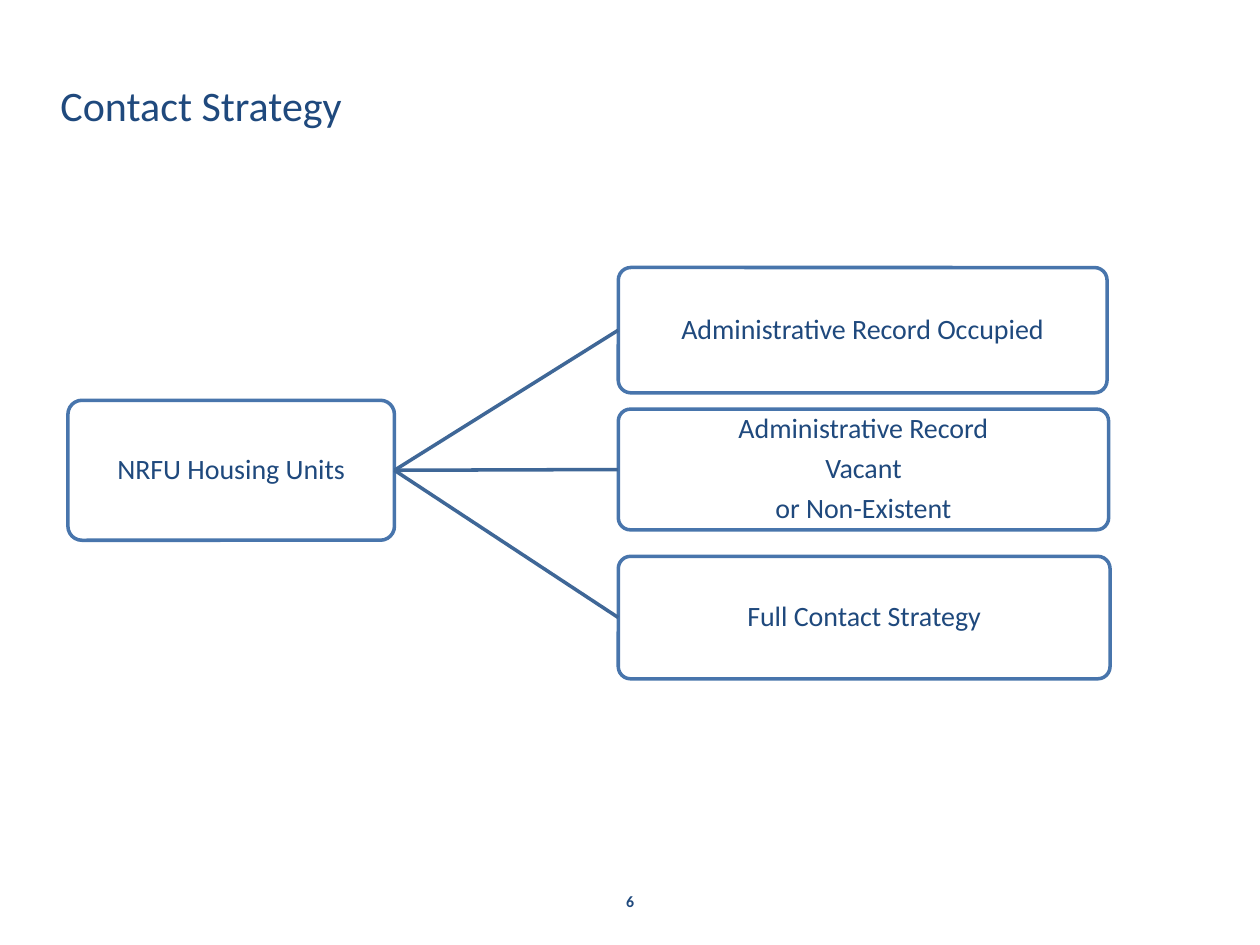
"""Build the contact strategy slide: one housing unit group branching to three treatments."""
from dataclasses import dataclass

from lxml import etree
from pptx import Presentation
from pptx.dml.color import RGBColor
from pptx.enum.shapes import MSO_CONNECTOR, MSO_SHAPE
from pptx.enum.text import MSO_ANCHOR, PP_ALIGN
from pptx.oxml.ns import qn
from pptx.shapes.autoshape import Shape
from pptx.shapes.connector import Connector
from pptx.slide import Slide
from pptx.text.text import TextFrame
from pptx.util import Pt

ROUNDED = MSO_SHAPE.ROUNDED_RECTANGLE
STRAIGHT = MSO_CONNECTOR.STRAIGHT
MIDDLE, TOP = MSO_ANCHOR.MIDDLE, MSO_ANCHOR.TOP
CENTER, LEFT = PP_ALIGN.CENTER, PP_ALIGN.LEFT
LEFT_SIDE, RIGHT_SIDE = 1, 3

FONT = "Calibri"
TEXT_COLOUR = "1F497D"
BOX_COLOUR = "4875AC"
BRANCH_COLOUR = "3F6797"
BOX_FILL = "FFFFFF"
LINE_WIDTH = 2
BRANCH_LEFT = 353.3


@dataclass(frozen=True)
class Node:
    """A rounded box, measured in points, with one text line per paragraph."""
    left: float
    top: float
    width: float
    height: float
    lines: tuple[str, ...]


@dataclass(frozen=True)
class Label:
    """A free line of text, measured in points."""
    left: float
    top: float
    width: float
    height: float
    text: str
    size: float
    bold: bool
    align: PP_ALIGN
    anchor: MSO_ANCHOR


HOUSING_UNITS = Node(38.8, 228.75, 186.6, 80, ("NRFU Housing Units",))
TREATMENTS = (
    Node(BRANCH_LEFT, 152.9, 279.3, 71.6, ("Administrative Record Occupied",)),
    Node(BRANCH_LEFT, 233.8, 280.2, 69,
         ("Administrative Record", "Vacant", "or Non-Existent")),
    Node(BRANCH_LEFT, 317.9, 281, 70, ("Full Contact Strategy",)),
)
LABELS = (
    Label(27.4, 41.8, 652, 36, "Contact Strategy", 24, False, LEFT, TOP),
    Label(276, 500.5, 168, 28.8, "6", 9, True, CENTER, MIDDLE),
)


def colour(value: str) -> RGBColor:
    """Turn a hex string into a colour."""
    return RGBColor.from_string(value)


def write_lines(frame: TextFrame, lines: tuple[str, ...], size: float,
                align: PP_ALIGN, bold: bool = False) -> None:
    """Write each line as its own paragraph."""
    frame.word_wrap = True
    for index, line in enumerate(lines):
        paragraph = frame.add_paragraph() if index else frame.paragraphs[0]
        paragraph.alignment = align
        run = paragraph.add_run()
        run.text = line
        run.font.name = FONT
        run.font.size = Pt(size)
        run.font.bold = bold
        run.font.color.rgb = colour(TEXT_COLOUR)


def draw_node(slide: Slide, node: Node) -> Shape:
    """Draw a rounded box with its text."""
    box = slide.shapes.add_shape(ROUNDED, Pt(node.left), Pt(node.top),
                                 Pt(node.width), Pt(node.height))
    box.adjustments[0] = 0.1
    box.shadow.inherit = False
    box.fill.solid()
    box.fill.fore_color.rgb = colour(BOX_FILL)
    box.line.color.rgb = colour(BOX_COLOUR)
    box.line.width = Pt(LINE_WIDTH)
    frame = box.text_frame
    frame.margin_left = frame.margin_right = Pt(0.8)
    frame.margin_top = frame.margin_bottom = Pt(0.8)
    frame.vertical_anchor = MIDDLE
    write_lines(frame, node.lines, 16, CENTER)
    for paragraph in frame.paragraphs:
        paragraph.line_spacing = 0.9
        paragraph.space_after = Pt(5.6)
    return box


def draw_branch(slide: Slide, source: Shape, target: Shape) -> Connector:
    """Join the right side of one box to the left side of another."""
    branch = slide.shapes.add_connector(STRAIGHT, Pt(0), Pt(0), Pt(0), Pt(0))
    branch.begin_connect(source, RIGHT_SIDE)
    branch.end_connect(target, LEFT_SIDE)
    branch.line.color.rgb = colour(BRANCH_COLOUR)
    branch.line.width = Pt(LINE_WIDTH)
    etree.SubElement(branch.element.spPr, qn("a:effectLst"))
    return branch


def draw_label(slide: Slide, label: Label) -> None:
    """Draw a text box holding one line."""
    box = slide.shapes.add_textbox(Pt(label.left), Pt(label.top),
                                   Pt(label.width), Pt(label.height))
    box.text_frame.vertical_anchor = label.anchor
    write_lines(box.text_frame, (label.text,), label.size, label.align, label.bold)


def main() -> None:
    """Build and save the slide."""
    deck = Presentation()
    deck.slide_width, deck.slide_height = Pt(720), Pt(540)
    slide = deck.slides.add_slide(deck.slide_layouts[6])
    housing_units = draw_node(slide, HOUSING_UNITS)
    for treatment in TREATMENTS:
        draw_branch(slide, housing_units, draw_node(slide, treatment))
    for label in LABELS:
        draw_label(slide, label)
    deck.save("out.pptx")


if __name__ == "__main__":
    main()
